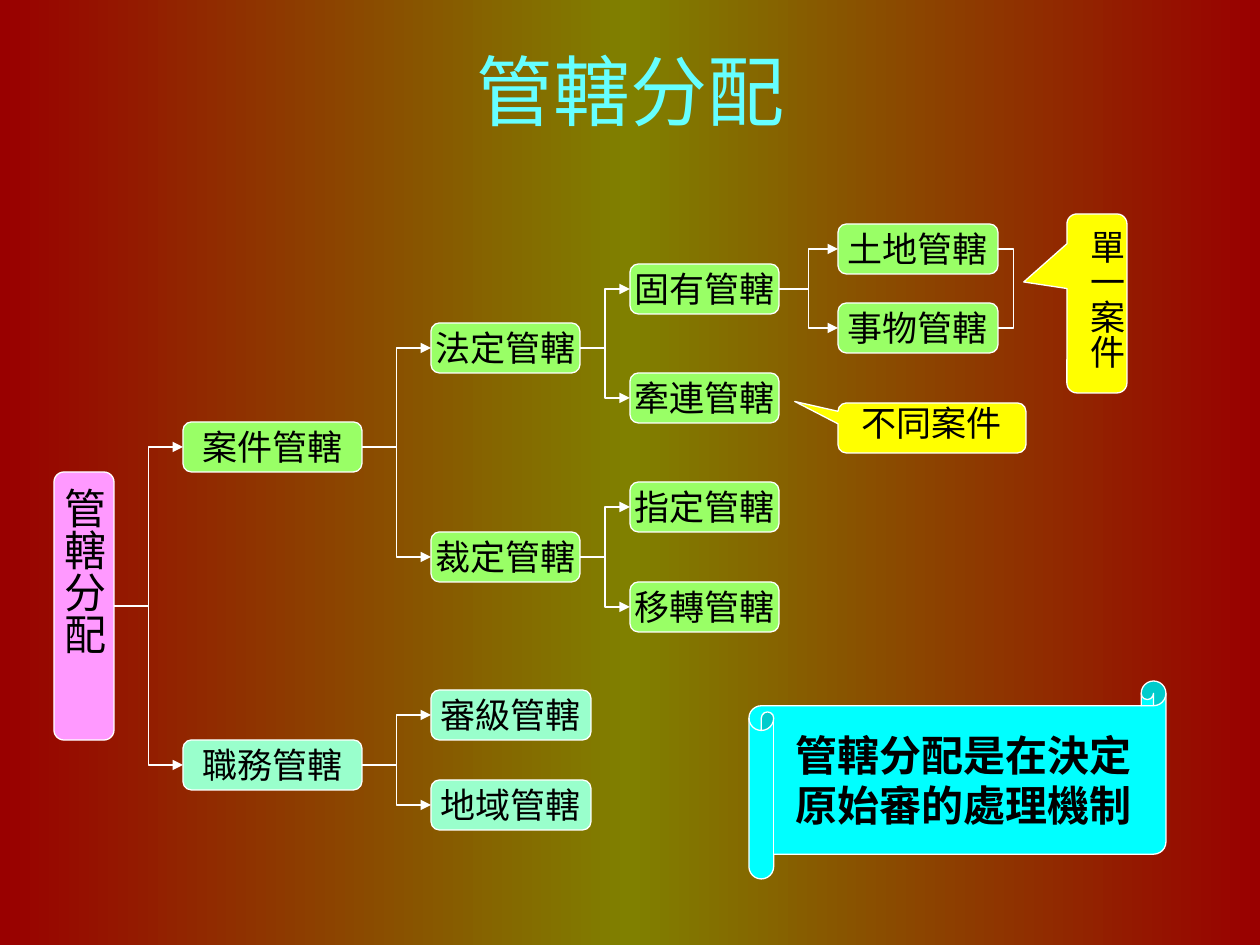
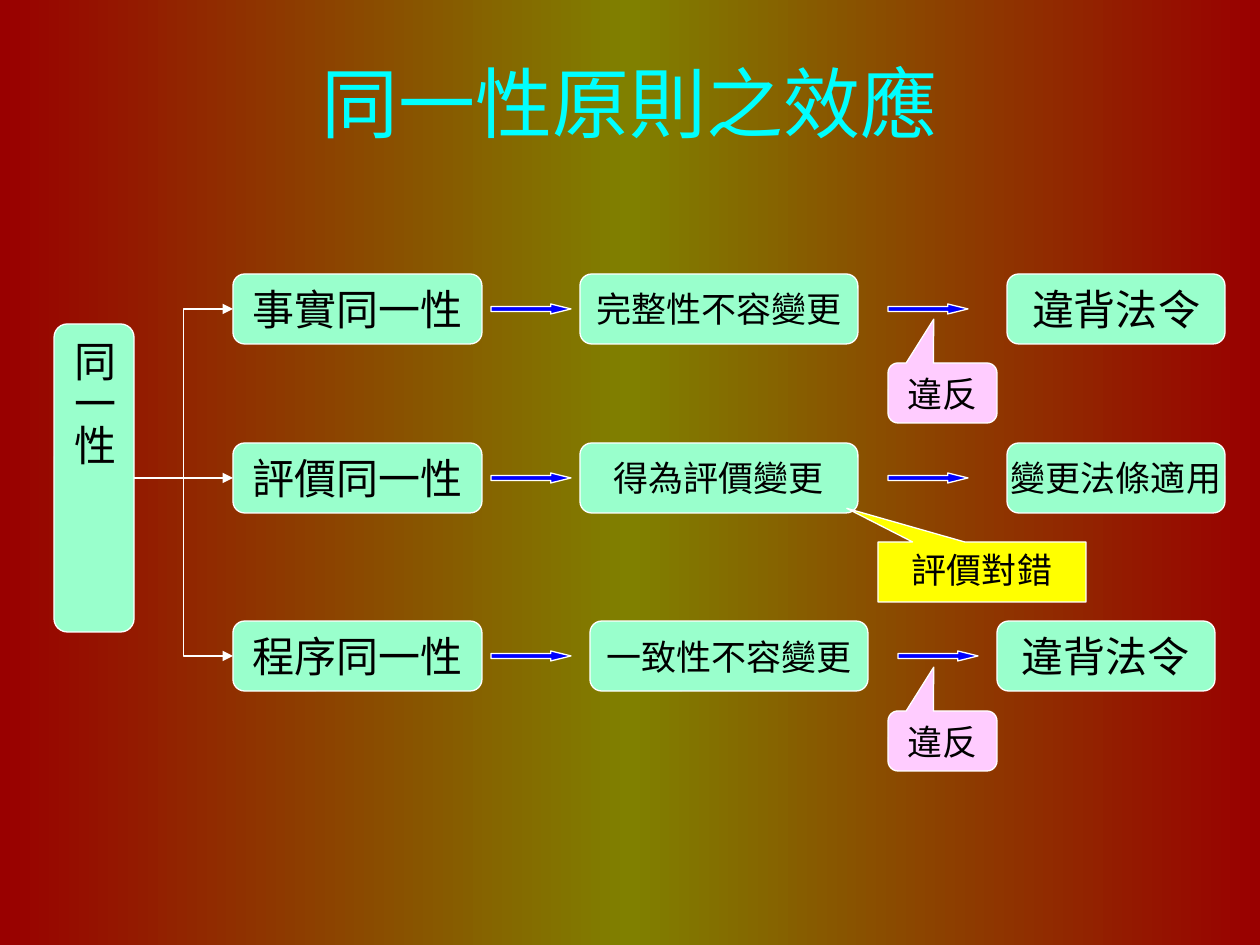
from copy import deepcopy
from pptx import Presentation
from pptx.dml.color import RGBColor
from pptx.enum.shapes import MSO_CONNECTOR as Connector, MSO_SHAPE as Shape
from pptx.enum.text import MSO_ANCHOR as Anchor, PP_ALIGN as Align
from pptx.oxml.ns import qn
from pptx.oxml.xmlchemy import OxmlElement
from pptx.util import Emu, Pt

PX = 914400 / 126
WHITE, BLACK, RED, OLIVE = "FFFFFF", "000000", "990000", "808000"
GREEN, MINT, VIOLET, PINK = "99FF66", "99FFCC", "FF99FF", "FFCCFF"
YELLOW, CYAN, SKY, BLUE = "FFFF00", "00FFFF", "66FFFF", "0000FF"
BODY_FONT, TITLE_FONT = "Roboto", "Arial"


def px(*lengths):
    return [Emu(round(length * PX)) for length in lengths]


def color(hex_string):
    return RGBColor.from_string(hex_string)


def set_background(master):
    fill = master.background.fill
    fill.gradient()
    fill.gradient_angle = 0
    stop_list = master.element.xpath(".//p:bg//a:gsLst")[0]
    stop_list.insert(1, deepcopy(stop_list[0]))
    for stop, position, hex_string in zip(fill.gradient_stops, (0, 0.5, 1), (RED, OLIVE, RED)):
        stop.position = position
        stop.color.rgb = color(hex_string)


def write(shape, text, size, hex_string=BLACK, font=BODY_FONT, bold=False,
          anchor=Anchor.MIDDLE, wrap=True, vertical=False, spacing=None):
    frame = shape.text_frame
    frame.text = text
    frame.word_wrap = wrap
    frame.vertical_anchor = anchor
    if vertical:
        frame._txBody.bodyPr.set("vert", "eaVert")
    paragraph = frame.paragraphs[0]
    paragraph.alignment = Align.CENTER
    paragraph.line_spacing = spacing
    run_font = paragraph.runs[0].font
    run_font.size, run_font.name, run_font.bold = Pt(size), font, bold
    run_font.color.rgb = color(hex_string)


def add_title(slide, text, box, hex_string):
    write(slide.shapes.add_textbox(*px(*box)), text, 44, hex_string, TITLE_FONT)


def add_filled(slide, kind, box, fill, adjustments=()):
    shape = slide.shapes.add_shape(kind, *px(*box))
    shape.shadow.inherit = False
    shape.fill.solid()
    shape.fill.fore_color.rgb = color(fill)
    shape.line.color.rgb = color(WHITE)
    shape.line.width = Pt(0.75)
    for index, value in enumerate(adjustments):
        shape.adjustments[index] = value
    return shape


def add_node(slide, text, box, fill, size=20, vertical=False):
    """Add a rounded box holding one unwrapped label."""
    node = add_filled(slide, Shape.FLOWCHART_ALTERNATE_PROCESS, box, fill)
    write(node, text, size, wrap=False, vertical=vertical)
    return node


def add_callout(slide, text, box, fill, tip, kind=Shape.ROUNDED_RECTANGULAR_CALLOUT, **options):
    callout = add_filled(slide, kind, box, fill, tip)
    write(callout, text, 20, anchor=Anchor.TOP, **options)


def add_line(slide, kind, *ends):
    line = slide.shapes.add_connector(kind, *ends)
    line.line.color.rgb = color(WHITE)
    line.line.width = Pt(0.75)
    line._element.spPr.append(OxmlElement("a:effectLst"))
    return line


def link(slide, parent, child, kind=Connector.ELBOW):
    line = add_line(slide, kind, parent.left + parent.width, parent.top + parent.height // 2,
                    child.left, child.top + child.height // 2)
    line.begin_connect(parent, 3)
    line.end_connect(child, 1)
    tail = OxmlElement("a:tailEnd")
    tail.set("type", "triangle")
    line.line._get_or_add_ln().append(tail)


def add_bracket(slide, x, top, bottom, depth):
    bracket = add_line(slide, Connector.ELBOW, *px(x, top, x + 1, bottom))
    guide = OxmlElement("a:gd")
    guide.set("name", "adj1")
    guide.set("fmla", f"val {depth * 100000}")
    geometry = bracket._element.spPr.find(qn("a:prstGeom"))
    guides = geometry.find(qn("a:avLst"))
    if guides is None:
        guides = OxmlElement("a:avLst")
        geometry.append(guides)
    guides.append(guide)


def build_allocation(slide):
    add_title(slide, "管轄分配", (64, 35, 1134, 110), SKY)
    nodes = {"管轄分配": add_node(slide, "管轄分配", (54, 472, 60, 268), VIOLET, 24, True)}
    branches = [
        ("管轄分配", 183, 179, GREEN, {"案件管轄": 422}),
        ("管轄分配", 183, 179, MINT, {"職務管轄": 740}),
        ("案件管轄", 431, 149, GREEN, {"法定管轄": 323, "裁定管轄": 532}),
        ("法定管轄", 630, 149, GREEN, {"固有管轄": 264, "牽連管轄": 373}),
        ("裁定管轄", 630, 149, GREEN, {"指定管轄": 482, "移轉管轄": 582}),
        ("職務管轄", 431, 160, MINT, {"審級管轄": 690, "地域管轄": 780}),
        ("固有管轄", 838, 160, GREEN, {"土地管轄": 224, "事物管轄": 303}),
    ]
    for parent, left, width, fill, children in branches:
        for name, top in children.items():
            nodes[name] = add_node(slide, name, (left, top, width, 50), fill)
            link(slide, nodes[parent], nodes[name])
    add_bracket(slide, 997, 249, 328, 17)
    add_callout(slide, "單一案件", (1067, 214, 60, 179), YELLOW, (-1.22, -0.12),
                vertical=True, spacing=0.75)
    add_callout(slide, "不同案件", (838, 403, 188, 50), YELLOW, (-0.73, -0.53), spacing=0.75)
    scroll = add_filled(slide, Shape.HORIZONTAL_SCROLL, (749, 681, 417, 198), CYAN)
    write(scroll, "管轄分配是在決定原始審的處理機制", 24, bold=True)


def build_effects(slide):
    add_title(slide, "同一性原則之效應", (63, 38, 1134, 127), CYAN)
    root = add_node(slide, "同一性", (54, 324, 80, 308), MINT, 24, True)
    rows = [
        (274, 0, "事實同一性", "完整性不容變更", "違背法令", 24, Connector.ELBOW),
        (443, 0, "評價同一性", "得為評價變更", "變更法條適用", 20, Connector.STRAIGHT),
        (621, 10, "程序同一性", "一致性不容變更", "違背法令", 24, Connector.ELBOW),
    ]
    for top, shift, principle, rule, result, result_size, kind in rows:
        link(slide, root, add_node(slide, principle, (233, top, 249, 70), MINT, 24), kind)
        add_node(slide, rule, (580 + shift, top, 278, 70), MINT)
        add_node(slide, result, (1007 - shift, top, 218, 70), MINT, result_size)
        for left in (491, 888 + shift):
            add_filled(slide, Shape.RIGHT_ARROW, (left, top + 30, 80, 10), BLUE, (0.5, 2.02))
    for top in (363, 711):
        add_callout(slide, "違反", (888, top, 109, 60), PINK, (-0.08, -1.23))
    add_callout(slide, "評價對錯", (878, 542, 208, 60), YELLOW, (-0.65, -1.06),
                Shape.RECTANGULAR_CALLOUT)


def main():
    presentation = Presentation()
    presentation.slide_width, presentation.slide_height = px(1260, 945)
    set_background(presentation.slide_master)
    blank = presentation.slide_layouts[6]
    for build in (build_allocation, build_effects):
        build(presentation.slides.add_slide(blank))
    presentation.save("out.pptx")


if __name__ == "__main__":
    main()
